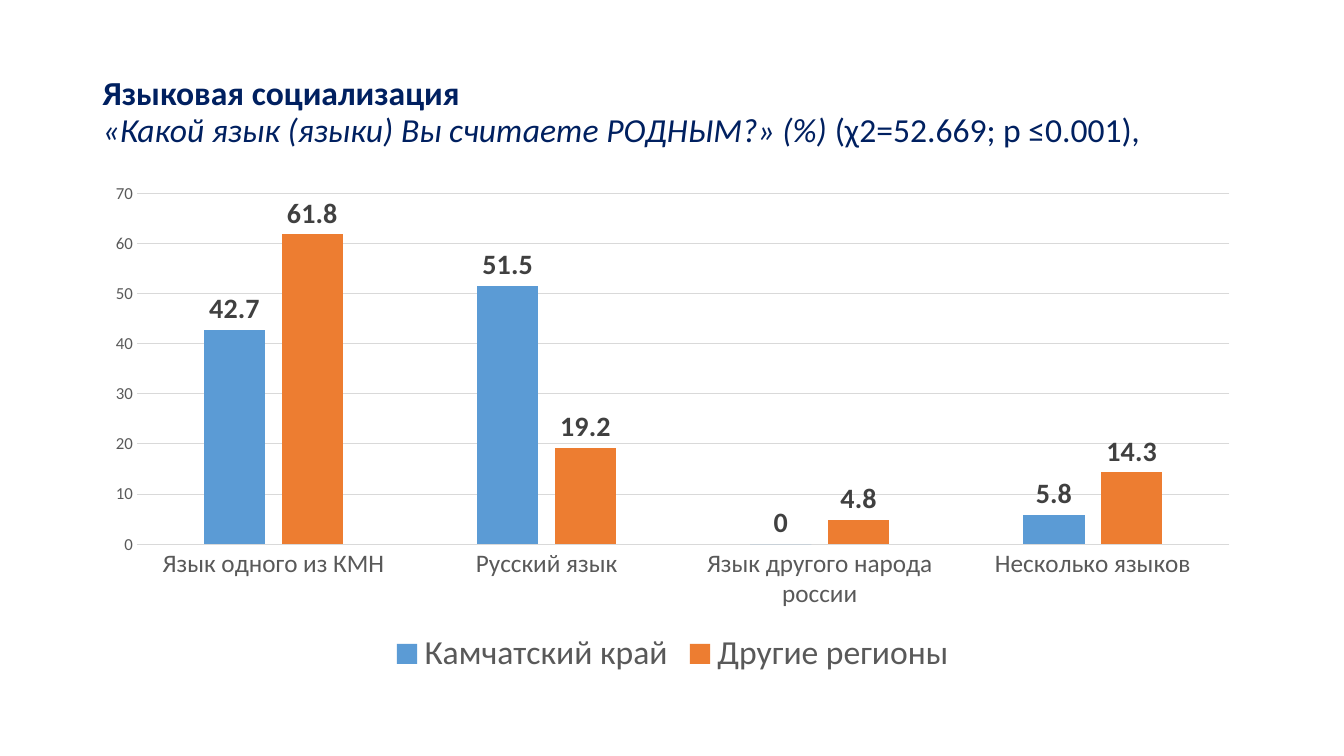
from dataclasses import dataclass
from typing import Any

from pptx import Presentation
from pptx.chart.data import CategoryChartData
from pptx.dml.color import RGBColor
from pptx.enum.chart import XL_CHART_TYPE, XL_LABEL_POSITION, XL_LEGEND_POSITION, XL_TICK_MARK
from pptx.enum.text import MSO_ANCHOR
from pptx.util import Inches, Pt


@dataclass(frozen=True)
class Theme:
    face: str = "Calibri"
    navy: str = "002060"
    gray: str = "595959"
    dark: str = "404040"
    rule: str = "D9D9D9"
    blue: str = "5B9BD5"
    orange: str = "ED7D31"
    large: int = 24
    label: int = 20
    group: int = 18
    scale: int = 12
    thin: float = 0.75


@dataclass(frozen=True)
class Box:
    left: float
    top: float
    width: float
    height: float


@dataclass(frozen=True)
class Span:
    text: str
    bold: bool = False
    italic: bool = False
    ends: bool = False


@dataclass(frozen=True)
class Region:
    name: str
    color: str
    values: tuple[float, ...]


THEME = Theme()
WIDTH, HEIGHT = Inches(13.33), Inches(7.5)
HEAD = Box(0.069, 0.053, 0.863, 0.193)
PLOT = Box(0.069, 0.229, 0.863, 0.672)
SPANS = (
    Span("Языковая социализация", bold=True, ends=True),
    Span("«Какой язык (языки) Вы считаете РОДНЫМ?» (%) ", italic=True),
    Span("(χ2=52.669; p ≤0.001)"),
    Span(",", italic=True),
)
GROUPS = ("Язык одного из КМН", "Русский язык", "Язык другого народа россии", "Несколько языков")
REGIONS = (
    Region("Камчатский край", THEME.blue, (42.7, 51.5, 0, 5.8)),
    Region("Другие регионы", THEME.orange, (61.8, 19.2, 4.8, 14.3)),
)


def apply(target: Any, values: dict[str, Any]) -> None:
    for name, value in values.items():
        setattr(target, name, value)


def style(font: Any, size: int, color: str, bold: bool = False, italic: bool = False) -> None:
    apply(font, {"name": THEME.face, "size": Pt(size), "bold": bold, "italic": italic})
    font.color.rgb = RGBColor.from_string(color)


def place(box: Box) -> tuple[int, int, int, int]:
    return (
        round(box.left * WIDTH),
        round(box.top * HEIGHT),
        round(box.width * WIDTH),
        round(box.height * HEIGHT),
    )


def rule(line: Any) -> None:
    line.color.rgb = RGBColor.from_string(THEME.rule)
    line.width = Pt(THEME.thin)


def draw_head(slide: Any) -> None:
    frame = slide.shapes.add_textbox(*place(HEAD)).text_frame
    apply(frame, {"word_wrap": True, "vertical_anchor": MSO_ANCHOR.MIDDLE})
    line = frame.paragraphs[0]
    line.line_spacing = 0.9
    for span in SPANS:
        run = line.add_run()
        run.text = span.text
        style(run.font, THEME.large, THEME.navy, span.bold, span.italic)
        if span.ends:
            line.add_line_break()


def draw_axes(chart: Any) -> None:
    for axis, size in ((chart.category_axis, THEME.group), (chart.value_axis, THEME.scale)):
        apply(axis, {"major_tick_mark": XL_TICK_MARK.NONE, "minor_tick_mark": XL_TICK_MARK.NONE})
        style(axis.tick_labels.font, size, THEME.gray)
    rule(chart.category_axis.format.line)
    axis = chart.value_axis
    apply(axis, {"has_major_gridlines": True, "minimum_scale": 0, "maximum_scale": 70, "major_unit": 10})
    axis.format.line.fill.background()
    rule(axis.major_gridlines.format.line)


def draw_bars(chart: Any) -> None:
    plot = chart.plots[0]
    apply(plot, {"gap_width": 219, "overlap": -27, "vary_by_categories": False})
    for series, region in zip(plot.series, REGIONS):
        series.invert_if_negative = False
        series.format.fill.solid()
        series.format.fill.fore_color.rgb = RGBColor.from_string(region.color)
        labels = series.data_labels
        apply(labels, {"show_value": True, "position": XL_LABEL_POSITION.OUTSIDE_END})
        style(labels.font, THEME.label, THEME.dark, bold=True)


def draw_chart(slide: Any) -> None:
    data = CategoryChartData()
    data.categories = GROUPS
    for region in REGIONS:
        data.add_series(region.name, region.values)
    chart = slide.shapes.add_chart(XL_CHART_TYPE.COLUMN_CLUSTERED, *place(PLOT), data).chart
    apply(chart, {"has_title": False, "has_legend": True})
    style(chart.font, THEME.scale, THEME.gray)
    apply(chart.legend, {"position": XL_LEGEND_POSITION.BOTTOM, "include_in_layout": False})
    style(chart.legend.font, THEME.large, THEME.gray)
    draw_axes(chart)
    draw_bars(chart)


def main() -> None:
    deck = Presentation()
    apply(deck, {"slide_width": WIDTH, "slide_height": HEIGHT})
    slide = deck.slides.add_slide(deck.slide_layouts[6])
    draw_head(slide)
    draw_chart(slide)
    deck.save("out.pptx")


if __name__ == "__main__":
    main()
